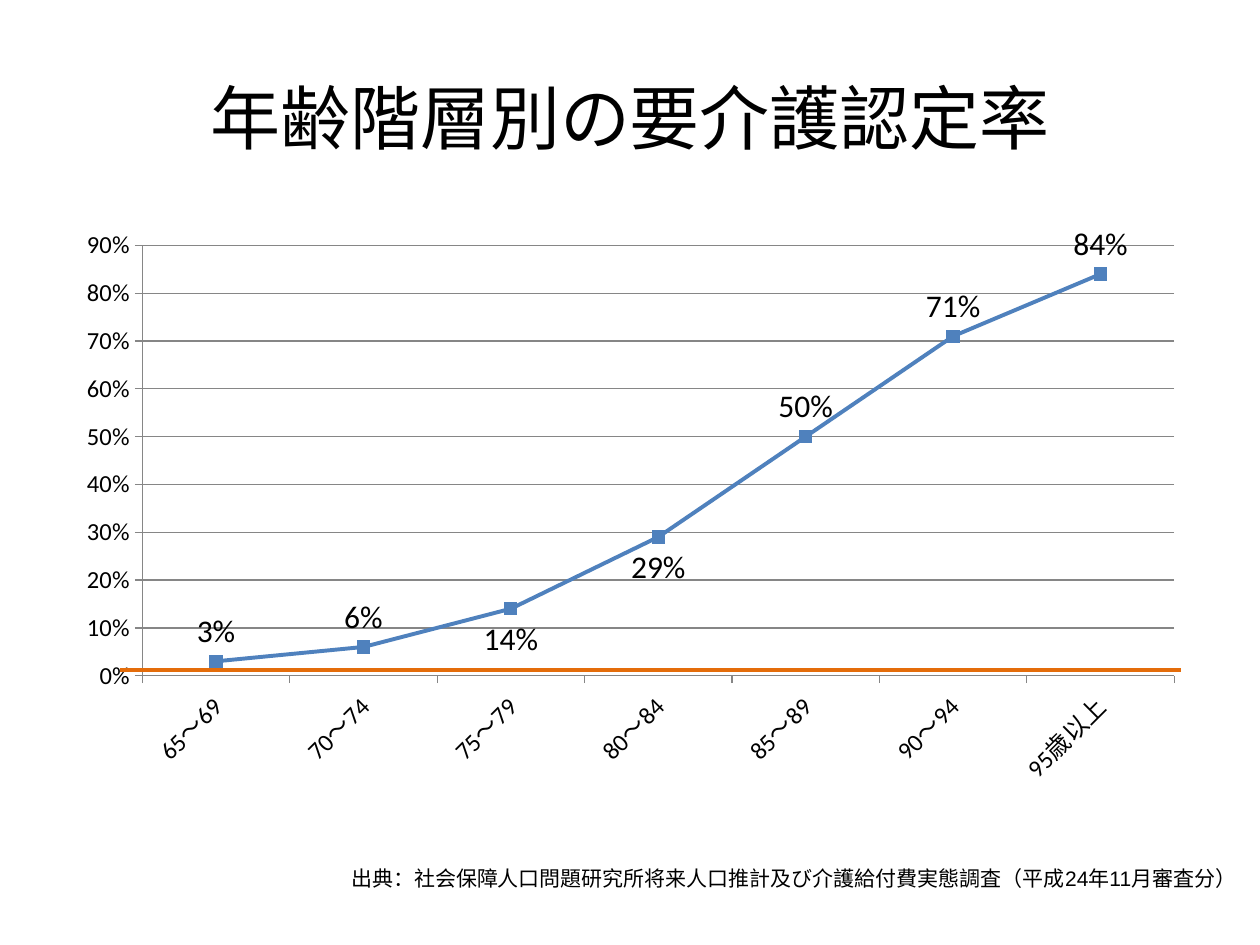
from lxml import etree
from pptx import Presentation
from pptx.chart.data import CategoryChartData
from pptx.dml.color import RGBColor
from pptx.enum.chart import XL_CHART_TYPE, XL_LABEL_POSITION, XL_MARKER_STYLE, XL_TICK_MARK
from pptx.enum.shapes import MSO_CONNECTOR
from pptx.enum.text import MSO_ANCHOR, PP_ALIGN
from pptx.oxml.ns import qn
from pptx.util import Inches, Pt

LINE_MARKERS = XL_CHART_TYPE.LINE_MARKERS
ABOVE, BELOW = XL_LABEL_POSITION.ABOVE, XL_LABEL_POSITION.BELOW
SQUARE = XL_MARKER_STYLE.SQUARE
OUTSIDE = XL_TICK_MARK.OUTSIDE
STRAIGHT = MSO_CONNECTOR.STRAIGHT
TOP, MIDDLE = MSO_ANCHOR.TOP, MSO_ANCHOR.MIDDLE
CENTER, RIGHT = PP_ALIGN.CENTER, PP_ALIGN.RIGHT

COLORS = {"text": "000000", "series": "4F81BD", "grid": "868686", "rule": "E46C0A"}
RGB = {name: RGBColor.from_string(value) for name, value in COLORS.items()}


def style_font(font, size, name="Calibri"):
    font.size, font.name = Pt(size), name
    font.color.rgb = RGB["text"]


def add_text(s, text, box, size, name, align, anchor):
    tf = s.shapes.add_textbox(*[Inches(v) for v in box]).text_frame
    tf.word_wrap = True
    tf.vertical_anchor = anchor
    p = tf.paragraphs[0]
    p.alignment = align
    r = p.add_run()
    r.text = text
    style_font(r.font, size, name)


prs = Presentation()
prs.slide_width, prs.slide_height = Inches(10), Inches(7.5)
s = prs.slides.add_slide(prs.slide_layouts[6])

# Certification rate by age group
data = CategoryChartData(number_format="0%")
data.categories = [f"{age}～{age + 4}" for age in range(65, 95, 5)] + ["95歳以上"]
data.add_series("要介護認定率", [0.03, 0.06, 0.14, 0.29, 0.5, 0.71, 0.84])
chart = s.shapes.add_chart(
    LINE_MARKERS, Inches(0.5), Inches(1.75), Inches(9), Inches(4.95), data
).chart
chart.has_legend = False
chart.has_title = False
style_font(chart.font, 10)

cat_axis, val_axis = chart.category_axis, chart.value_axis
for axis in (cat_axis, val_axis):
    style_font(axis.tick_labels.font, 14)
    axis.major_tick_mark = OUTSIDE
    axis.format.line.color.rgb = RGB["grid"]
    axis.format.line.width = Pt(0.75)
cat_axis.tick_labels.font._element.getparent().getparent().getparent().find(
    qn("a:bodyPr")
).set("rot", "-2700000")
val_axis.minimum_scale, val_axis.maximum_scale, val_axis.major_unit = 0, 0.9, 0.1
val_axis.tick_labels.number_format = "0%"
val_axis.tick_labels.number_format_is_linked = False
val_axis.has_major_gridlines = True
val_axis.major_gridlines.format.line.color.rgb = RGB["grid"]
val_axis.major_gridlines.format.line.width = Pt(0.75)

series = chart.plots[0].series[0]
series.smooth = False
series.format.line.color.rgb = RGB["series"]
series.format.line.width = Pt(2.25)
series.marker.style, series.marker.size = SQUARE, 7
series.marker.format.fill.solid()
series.marker.format.fill.fore_color.rgb = RGB["series"]
series.marker.format.line.color.rgb = RGB["series"]
labels = series.data_labels
labels.show_value = True
labels.position = ABOVE
labels.number_format, labels.number_format_is_linked = "0%", False
style_font(labels.font, 18)
for index in (2, 3):
    label = series.points[index].data_label
    style_font(label.font, 18)
    label.position = BELOW

# Fixed plot area, as fractions of the chart
plot_area = chart._chartSpace.chart.plotArea
for old in plot_area.findall(qn("c:layout")):
    plot_area.remove(old)
layout = etree.Element(qn("c:layout"))
plot_area.insert(0, layout)
manual = etree.SubElement(layout, qn("c:manualLayout"))
for tag, value in (("layoutTarget", "inner"), ("xMode", "edge"), ("yMode", "edge"),
                   ("x", "0.07"), ("y", "0.04"), ("w", "0.91"), ("h", "0.69")):
    etree.SubElement(manual, qn(f"c:{tag}")).set("val", value)

rule = s.shapes.add_connector(STRAIGHT, Inches(0.95), Inches(5.32), Inches(9.37), Inches(5.32))
rule.line.color.rgb = RGB["rule"]
rule.line.width = Pt(2.5)
etree.SubElement(rule._element.spPr, qn("a:effectLst"))

add_text(s, "出典：社会保障人口問題研究所将来人口推計及び介護給付費実態調査（平成24年11月審査分）",
         (0, 6.82, 9.91, 0.3), 12, "Arial", RIGHT, TOP)
add_text(s, "年齢階層別の要介護認定率", (0.5, 0.3, 9, 1.25), 40, "Noto Sans CJK JP", CENTER, MIDDLE)

prs.save("out.pptx")
